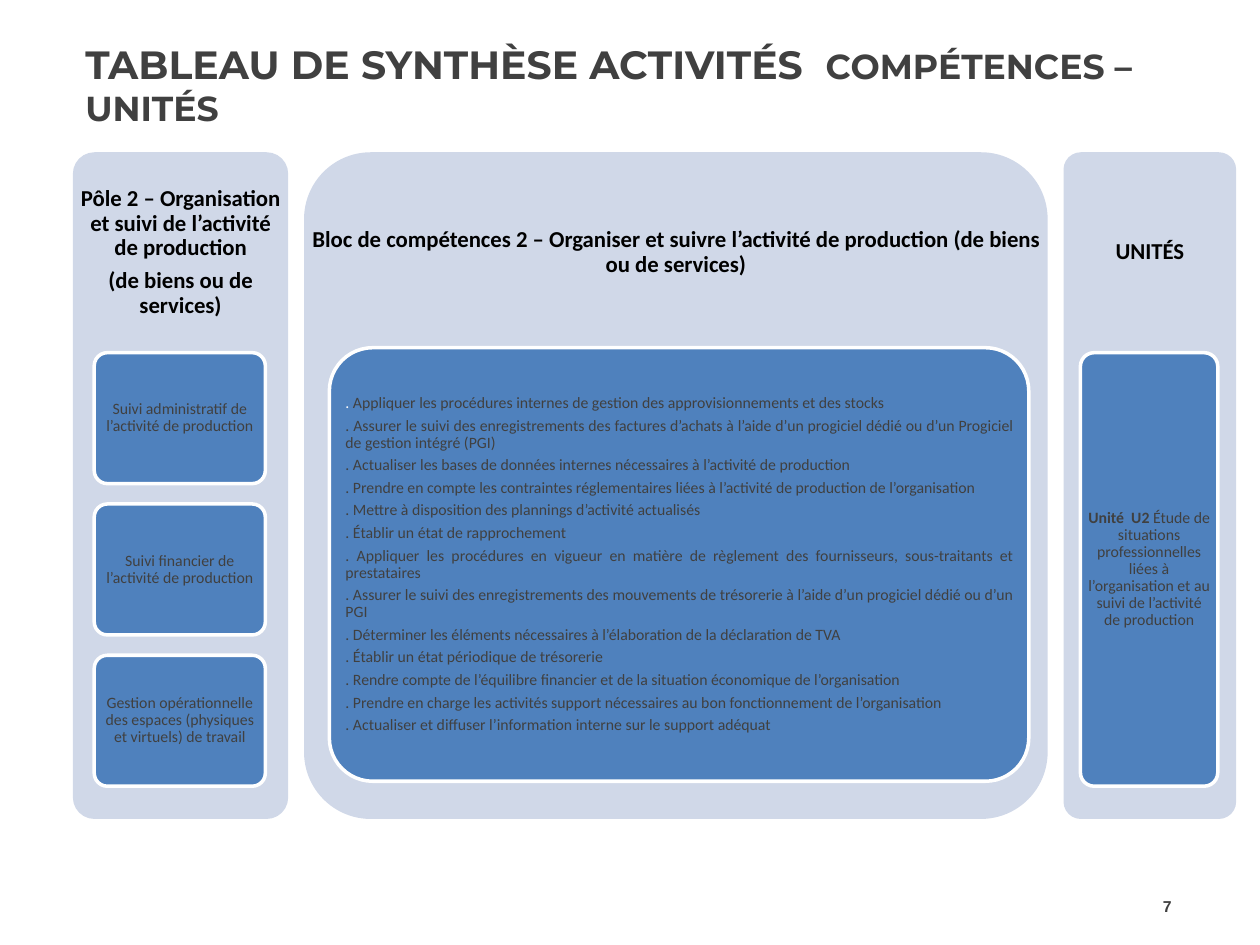
import pptx
import pptx.dml.color
import pptx.enum.shapes
import pptx.enum.text
import pptx.util

Cm, Pt = pptx.util.Cm, pptx.util.Pt
ALIGN = pptx.enum.text.PP_ALIGN

THEME = {
    "panel": "D0D8E8", "card": "4F81BD", "white": "FFFFFF",
    "dark": "404040", "black": "000000",
    "title_font": "Montserrat", "body_font": "Calibri", "number_font": "Arial",
    "title": 22.5, "subtitle": 19.8, "header": 13, "body": 9,
}

TITLE = [("TABLEAU DE SYNTHÈSE ACTIVITÉS  ", {"size": THEME["title"]}),
         ("COMPÉTENCES – UNITÉS", {"size": THEME["subtitle"]})]
PAGE = "7"

SKILLS = [
    [(". ", {"color": THEME["white"]}),
     ("Appliquer les procédures internes de gestion des approvisionnements et des stocks", {})],
    ". Assurer le suivi des enregistrements des factures d’achats à l’aide d’un progiciel dédié ou d’un Progiciel de gestion intégré (PGI)",
    ". Actualiser les bases de données internes nécessaires à l’activité de production",
    ". Prendre en compte les contraintes réglementaires liées à l’activité de production de l’organisation",
    ". Mettre à disposition des plannings d’activité actualisés",
    ". Établir un état de rapprochement",
    ". Appliquer les procédures en vigueur en matière de règlement des fournisseurs, sous-traitants et prestataires",
    ". Assurer le suivi des enregistrements des mouvements de trésorerie à l’aide d’un progiciel dédié ou d’un PGI",
    ". Déterminer les éléments nécessaires à l’élaboration de la déclaration de TVA",
    ". Établir un état périodique de trésorerie",
    ". Rendre compte de l’équilibre financier et de la situation économique de l’organisation",
    ". Prendre en charge les activités support nécessaires au bon fonctionnement de l’organisation",
    ". Actualiser et diffuser l’information interne sur le support adéquat",
]

UNIT = [("Unité  U2 ", {"bold": True}),
        ("Étude de situations professionnelles liées à l’organisation et au suivi de l’activité de production", {})]

COLUMNS = [
    {"width": 4.34, "inset": 0.43, "card_width": 3.45, "card_top": 7.11, "align": ALIGN.CENTER,
     "header": ["Pôle 2 – Organisation et suivi de l’activité de production",
                "(de biens ou de services)"],
     "cards": [["Suivi administratif de l’activité de production"],
               ["Suivi financier de l’activité de production"],
               ["Gestion opérationnelle des espaces (physiques et virtuels) de travail"]]},
    {"width": 14.99, "inset": 0.51, "card_width": 14.1, "card_top": 7.01, "align": ALIGN.JUSTIFY,
     "header": ["Bloc de compétences 2 – Organiser et suivre l’activité de production (de biens ou de services)"],
     "cards": [SKILLS]},
    {"width": 3.48, "inset": 0.34, "card_width": 2.77, "card_top": 7.11, "align": ALIGN.CENTER,
     "header": ["UNITÉS"],
     "cards": [[UNIT]]},
]

LEFT, TOP, HEIGHT, HEADER_HEIGHT, COLUMN_GAP = 1.47, 3.07, 13.44, 4.04, 0.32
STACK_HEIGHT, CARD_GAP = 8.74, 0.41


def rgb(value):
    return pptx.dml.color.RGBColor.from_string(value)


def write(shape, paragraphs, font, size, color, bold=False, align=ALIGN.LEFT,
          margins=(0.25, 0.13), spacing=None, gap=0):
    tf = shape.text_frame
    tf.word_wrap = True
    tf.vertical_anchor = pptx.enum.text.MSO_ANCHOR.MIDDLE
    tf.margin_left = tf.margin_right = Cm(margins[0])
    tf.margin_top = tf.margin_bottom = Cm(margins[1])
    for i, runs in enumerate(paragraphs):
        p = tf.add_paragraph() if i else tf.paragraphs[0]
        p.alignment = align
        p.line_spacing = spacing
        p.space_after = Pt(gap)
        p.font.name, p.font.size, p.font.bold = font, Pt(size), bold
        p.font.color.rgb = rgb(color)
        for text, style in ([(runs, {})] if isinstance(runs, str) else runs):
            r = p.add_run()
            r.text = text
            if "size" in style:
                r.font.size = Pt(style["size"])
            if "bold" in style:
                r.font.bold = style["bold"]
            if "color" in style:
                r.font.color.rgb = rgb(style["color"])


def textbox(s, x, y, w, h):
    return s.shapes.add_textbox(Cm(x), Cm(y), Cm(w), Cm(h))


def rounded(s, x, y, w, h, fill, line=None):
    sp = s.shapes.add_shape(pptx.enum.shapes.MSO_SHAPE.ROUNDED_RECTANGLE,
                            Cm(x), Cm(y), Cm(w), Cm(h))
    sp.adjustments[0] = 0.1
    sp.shadow.inherit = False
    sp.fill.solid()
    sp.fill.fore_color.rgb = rgb(fill)
    if line:
        sp.line.color.rgb = rgb(line)
        sp.line.width = Pt(2)
    else:
        sp.line.fill.background()
    return sp


def add_column(s, x, column):
    rounded(s, x, TOP, column["width"], HEIGHT, THEME["panel"])
    write(textbox(s, x, TOP, column["width"], HEADER_HEIGHT), column["header"],
          THEME["body_font"], THEME["header"], THEME["black"], True, ALIGN.CENTER,
          (0.13, 0.13), 0.9, 4.5)
    count = len(column["cards"])
    height = (STACK_HEIGHT - CARD_GAP * (count - 1)) / count
    for i, paragraphs in enumerate(column["cards"]):
        y = column["card_top"] + i * (height + CARD_GAP)
        sp = rounded(s, x + column["inset"], y, column["card_width"], height,
                     THEME["card"], THEME["white"])
        write(sp, paragraphs, THEME["body_font"], THEME["body"], THEME["dark"], False,
              column["align"], (0.07, 0.05), 0.9, 3.15)


def main():
    prs = pptx.Presentation()
    prs.slide_width, prs.slide_height = Cm(25.4), Cm(19.05)
    s = prs.slides.add_slide(prs.slide_layouts[6])
    write(textbox(s, 1.47, 0.65, 22.66, 2.1), [TITLE],
          THEME["title_font"], THEME["title"], THEME["dark"], True)
    write(textbox(s, 22.63, 17.75, 1.24, 1.02), [PAGE],
          THEME["number_font"], THEME["body"], THEME["dark"], True, ALIGN.RIGHT)
    x = LEFT
    for column in COLUMNS:
        add_column(s, x, column)
        x += column["width"] + COLUMN_GAP
    prs.save("out.pptx")


if __name__ == "__main__":
    main()
